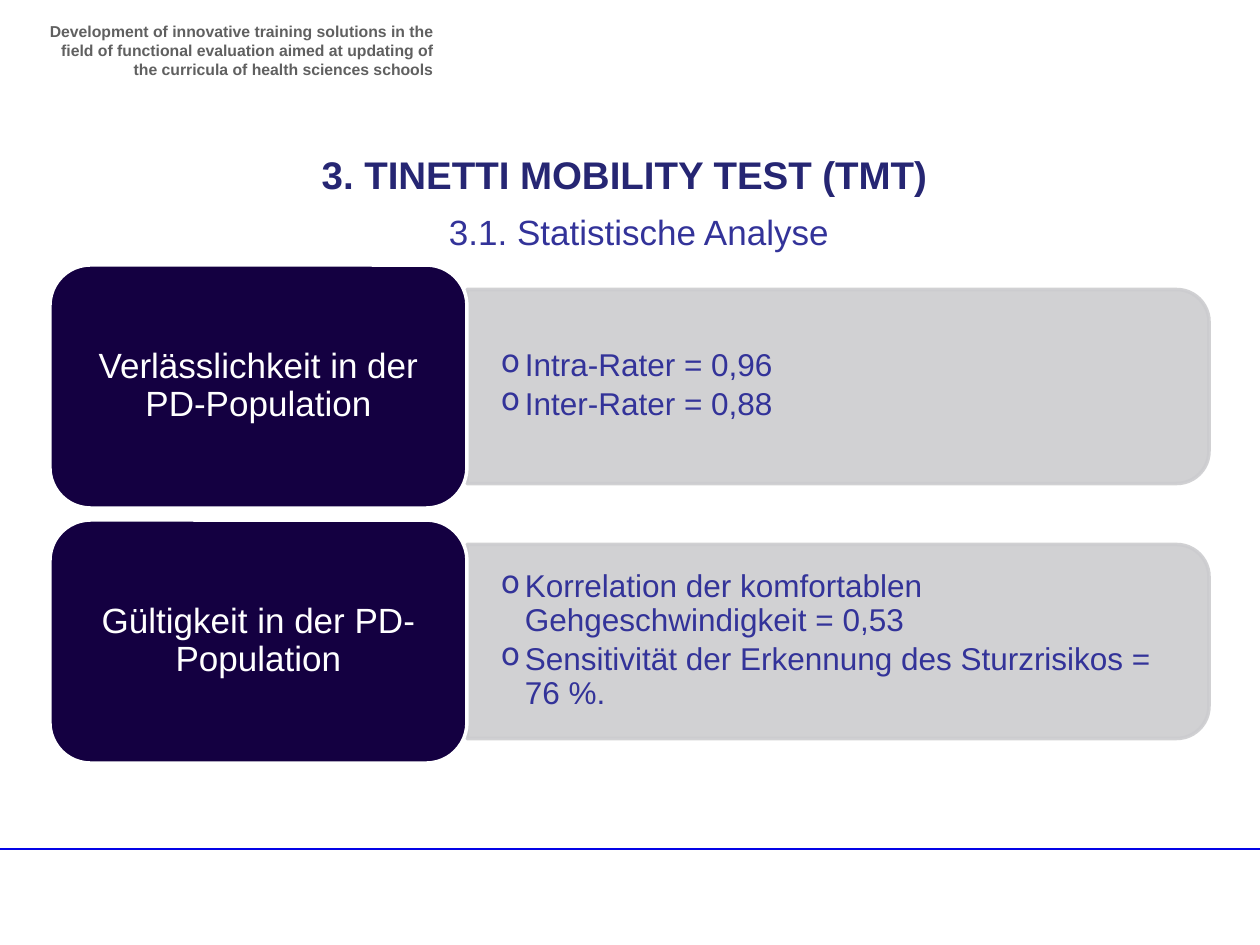
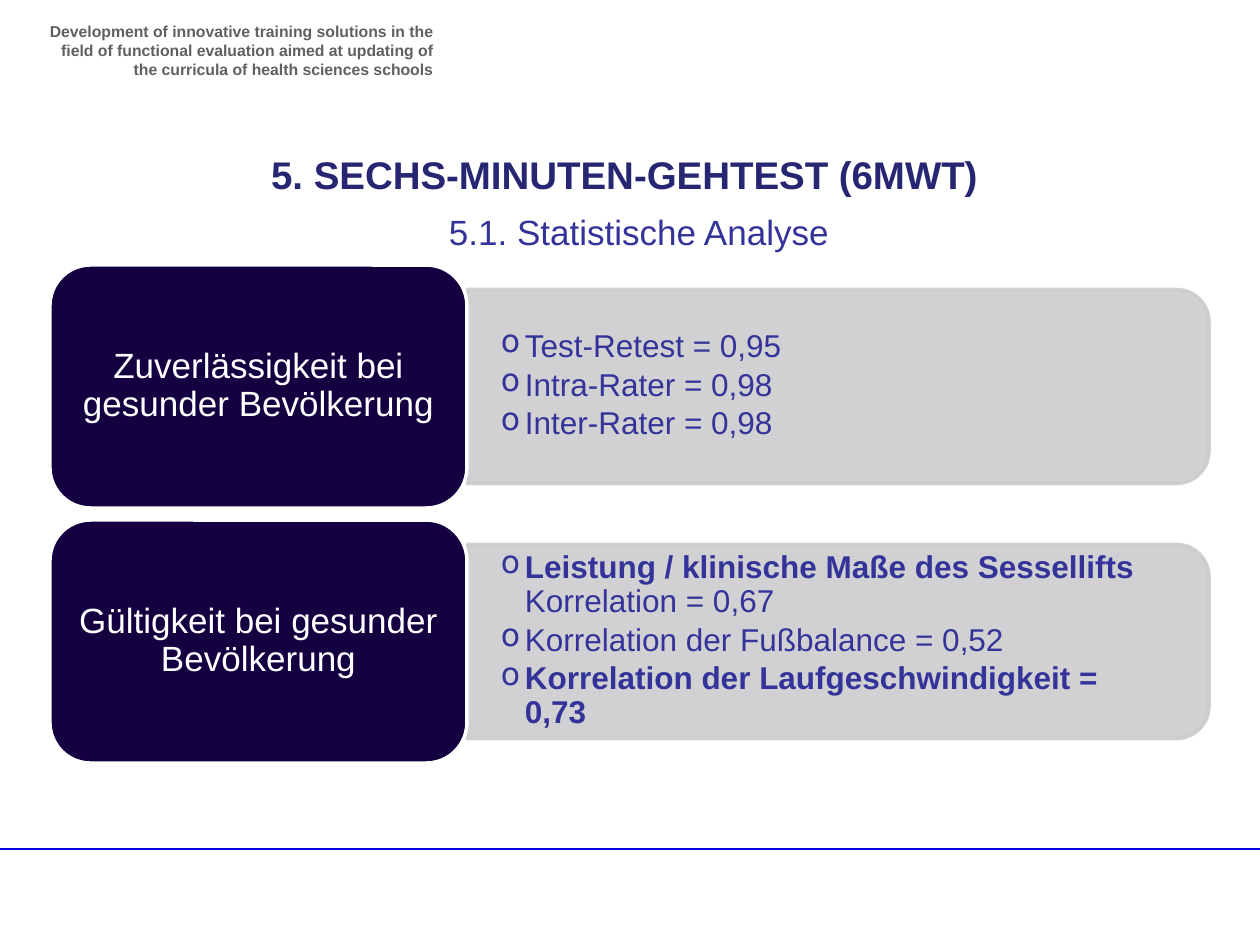
import pptx
import pptx.util
from lxml import etree
from pptx.dml.color import RGBColor
from pptx.enum.shapes import MSO_CONNECTOR, MSO_SHAPE
from pptx.enum.text import MSO_ANCHOR, MSO_AUTO_SIZE, PP_ALIGN
from pptx.oxml.ns import qn

EMU_PER_PX = 914400 / 126
FONT = "Arial"
COLORS = {
    "rule": "0404E6",
    "header": "606060",
    "title": "262673",
    "text": "333399",
    "band": "CCCCCF",
    "label": "140041",
    "white": "FFFFFF",
}
HEADER = ("Development of innovative training solutions in the ﬁeld of functional "
          "evaluation aimed at updating of the curricula of health sciences schools")
ROW_TOP, ROW_PITCH = 265, 255
LABEL_LEFT, LABEL_WIDTH, LABEL_HEIGHT = 50, 417, 243
BAND_LEFT, BAND_LENGTH, BAND_HEIGHT = 467, 742, 194
BULLET_INDENT = 24

# Each bullet is a list of (text, bold) runs.
SLIDES = [
    {
        "title": "3. TINETTI MOBILITY TEST (TMT)",
        "subtitle": "3.1. Statistische Analyse",
        "subtitle_width": 551,
        "rows": [
            ("Verlässlichkeit in der PD-Population", [
                [("Intra-Rater = 0,96", False)],
                [("Inter-Rater = 0,88", False)],
            ]),
            ("Gültigkeit in der PD-Population", [
                [("Korrelation der komfortablen Gehgeschwindigkeit = 0,53", False)],
                [("Sensitivität der Erkennung des Sturzrisikos = 76 %.", False)],
            ]),
        ],
    },
    {
        "title": "5. SECHS-MINUTEN-GEHTEST (6MWT)",
        "subtitle": "5.1. Statistische Analyse",
        "subtitle_width": 471,
        "rows": [
            ("Zuverlässigkeit bei gesunder Bevölkerung", [
                [("Test-Retest = 0,95", False)],
                [("Intra-Rater = 0,98", False)],
                [("Inter-Rater = 0,98", False)],
            ]),
            ("Gültigkeit bei gesunder Bevölkerung", [
                [("Leistung / klinische Maße des Sessellifts ", True),
                 ("Korrelation = 0,67", False)],
                [("Korrelation der Fußbalance = 0,52", False)],
                [("Korrelation der Laufgeschwindigkeit = 0,73", True)],
            ]),
        ],
    },
]


def px(*lengths):
    return [pptx.util.Emu(round(length * EMU_PER_PX)) for length in lengths]


def write(box, paragraphs, size, color, align=PP_ALIGN.LEFT, anchor=MSO_ANCHOR.TOP,
          insets=(13, 6), spacing=None, bullets=False):
    """Fill a box with paragraphs, each a list of (text, bold) runs."""
    frame = box.text_frame
    frame.word_wrap = True
    frame.vertical_anchor = anchor
    frame.margin_left, frame.margin_top = px(*insets)
    frame.margin_right, frame.margin_bottom = px(*insets)
    for index, runs in enumerate(paragraphs):
        para = frame.paragraphs[0] if index == 0 else frame.add_paragraph()
        para.alignment = align
        para.line_spacing = spacing
        if bullets:
            para.level = 1
            para.space_after = pptx.util.Pt(2.7)
            properties = para._p.get_or_add_pPr()
            indent = px(BULLET_INDENT)[0]
            properties.set("marL", str(indent))
            properties.set("indent", str(-indent))
            etree.SubElement(properties, qn("a:buChar")).set("char", "o")
        para.font.name = FONT
        para.font.size = pptx.util.Pt(size)
        para.font.color.rgb = RGBColor.from_string(COLORS[color])
        for text, bold in runs:
            span = para.add_run()
            span.text = text
            span.font.bold = bold


deck = pptx.Presentation()
deck.slide_width, deck.slide_height = px(1260, 945)

for content in SLIDES:
    page = deck.slides.add_slide(deck.slide_layouts[5])
    shapes = page.shapes

    rule = shapes.add_connector(MSO_CONNECTOR.STRAIGHT, *px(-6, 849, 1260, 849))
    rule.line.color.rgb = RGBColor.from_string(COLORS["rule"])
    rule.line.width = pptx.util.Pt(1)
    etree.SubElement(rule._element.spPr, qn("a:effectLst"))

    header = shapes.add_textbox(*px(35, 16, 411, 59))
    write(header, [[(HEADER, True)]], 9, "header", PP_ALIGN.RIGHT)

    title = shapes.title
    title.left, title.top, title.width, title.height = px(84, 145, 1081, 59)
    write(title, [[(content["title"], True)]], 22, "title", PP_ALIGN.CENTER)
    title.text_frame.auto_size = MSO_AUTO_SIZE.SHAPE_TO_FIT_TEXT

    for row, (label_text, bullets) in enumerate(content["rows"]):
        top = ROW_TOP + row * ROW_PITCH
        middle = top + LABEL_HEIGHT / 2

        # The band is an upright shape turned a quarter, so its right corners are round.
        band = shapes.add_shape(MSO_SHAPE.ROUND_2_SAME_RECTANGLE, *px(
            BAND_LEFT + (BAND_LENGTH - BAND_HEIGHT) / 2, middle - BAND_LENGTH / 2,
            BAND_HEIGHT, BAND_LENGTH))
        band.rotation = 90
        label = shapes.add_shape(MSO_SHAPE.ROUNDED_RECTANGLE, *px(
            LABEL_LEFT, top, LABEL_WIDTH, LABEL_HEIGHT))
        for shape, fill, line in ((band, "band", "band"), (label, "label", "white")):
            shape.shadow.inherit = False
            shape.fill.solid()
            shape.fill.fore_color.rgb = RGBColor.from_string(COLORS[fill])
            shape.line.color.rgb = RGBColor.from_string(COLORS[line])
            shape.line.width = pptx.util.Pt(2)
        for color in band._element.spPr.iter(qn("a:srgbClr")):
            etree.SubElement(color, qn("a:alpha")).set("val", "90000")

        findings = shapes.add_textbox(*px(BAND_LEFT, middle - 88, 732, 175))
        write(findings, bullets, 18, "text", anchor=MSO_ANCHOR.MIDDLE,
              insets=(34, 18), spacing=0.9, bullets=True)
        caption = shapes.add_textbox(*px(LABEL_LEFT + 12, top + 12,
                                         LABEL_WIDTH - 24, LABEL_HEIGHT - 24))
        write(caption, [[(label_text, False)]], 20, "white", PP_ALIGN.CENTER,
              MSO_ANCHOR.MIDDLE, insets=(10, 5), spacing=0.9)

    subtitle = shapes.add_textbox(*px(436, 204, content["subtitle_width"], 97))
    write(subtitle, [[(content["subtitle"], False)]], 20, "text")

deck.save("out.pptx")
